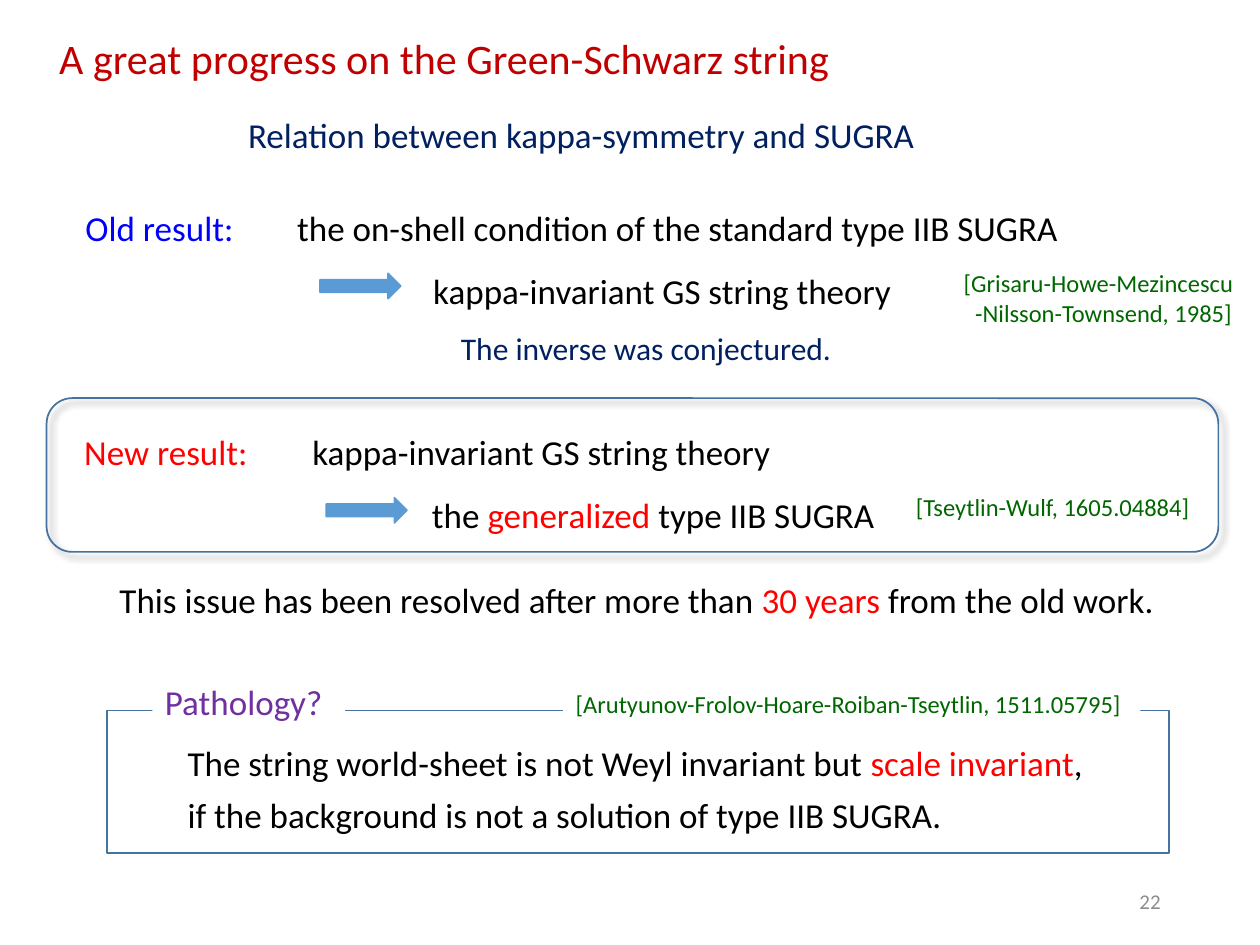
from dataclasses import dataclass

from lxml.etree import SubElement
from pptx import Presentation
from pptx.dml.color import RGBColor
from pptx.enum.shapes import MSO_SHAPE as Shape
from pptx.enum.text import MSO_ANCHOR as Anchor, PP_ALIGN as Align
from pptx.oxml.ns import qn
from pptx.util import Inches, Pt


@dataclass(frozen=True)
class Theme:
    font: str = "Calibri"
    title: str = "C00000"
    ink: str = "000000"
    navy: str = "002060"
    old: str = "0000FF"
    accent: str = "FF0000"
    citation: str = "006600"
    pathology: str = "7030A0"
    page: str = "8C8C8C"
    arrow: str = "5B9BD5"
    frame: str = "43739E"
    paper: str = "FFFFFF"
    title_size: int = 24
    text_size: int = 20
    remark_size: int = 18
    citation_size: int = 14
    page_size: int = 12


@dataclass(frozen=True)
class Box:
    left: float
    top: float
    width: float
    height: float

    def inner(self, dx, dy, width, height):
        return Box(self.left + dx, self.top + dy, width, height)

    def emu(self):
        return [Inches(n) for n in (self.left, self.top, self.width, self.height)]


THEME = Theme()


def write(holder, lines, size, color, spacing=None, wrap=False,
          align=Align.LEFT, anchor=Anchor.TOP):
    frame = holder.text_frame
    frame.word_wrap = wrap
    frame.vertical_anchor = anchor
    for index, line in enumerate(lines):
        paragraph = frame.add_paragraph() if index else frame.paragraphs[0]
        paragraph.alignment = align
        if spacing:
            paragraph.line_spacing = spacing
        paragraph.font.name = THEME.font
        paragraph.font.size = Pt(size)
        paragraph.font.color.rgb = RGBColor.from_string(color)
        for part in [line] if isinstance(line, str) else line:
            words, tint = (part, None) if isinstance(part, str) else part
            run = paragraph.add_run()
            run.text = words
            if tint:
                run.font.color.rgb = RGBColor.from_string(tint)
    return frame.paragraphs


def add_text(slide, box, lines, size=THEME.text_size, color=THEME.ink, **options):
    return write(slide.shapes.add_textbox(*box.emu()), lines, size, color, **options)


def add_shape(slide, kind, box, fill=None, line=None):
    shape = slide.shapes.add_shape(kind, *box.emu())
    shape.shadow.inherit = False
    if fill:
        shape.fill.solid()
        shape.fill.fore_color.rgb = RGBColor.from_string(fill)
    else:
        shape.fill.background()
    if line:
        shape.line.color.rgb = RGBColor.from_string(line)
        shape.line.width = Pt(1)
    else:
        shape.line.fill.background()
    return shape


def indent(paragraph, inches):
    properties = paragraph._p.get_or_add_pPr()
    properties.set("marL", str(Inches(inches)))
    properties.set("indent", "0")


def add_tab_stop(paragraph, inches):
    stops = SubElement(paragraph._p.get_or_add_pPr(), qn("a:tabLst"))
    SubElement(stops, qn("a:tab"), pos=str(Inches(inches)), algn="l")
    default_run = paragraph._p.pPr.find(qn("a:defRPr"))
    if default_run is not None:
        default_run.addprevious(stops)


def cast_shadow(shape):
    effects = shape._element.spPr.find(qn("a:effectLst"))
    shadow = SubElement(effects, qn("a:outerShdw"), blurRad=str(Pt(4)),
                        dist=str(Pt(3)), dir=str(45 * 60000), algn="tl")
    black = SubElement(shadow, qn("a:srgbClr"), val=THEME.ink)
    SubElement(black, qn("a:alpha"), val="40000")


def add_heading(slide, box):
    title = slide.shapes.title
    title.left, title.top, title.width, title.height = box.emu()
    write(title, ["A great progress on the Green-Schwarz string"],
          THEME.title_size, THEME.title)
    add_text(slide, box.inner(1.5, 0.64, 5.55, 0.44),
             ["Relation between kappa-symmetry and SUGRA"], color=THEME.navy)


def add_implication(slide, box, label, color, premise, conclusion, tab, arrow_left):
    first, second = add_text(
        slide, box, [[(f"{label}\t", color), premise], conclusion], wrap=True)
    add_tab_stop(first, tab)
    indent(second, 2.76)
    second.line_spacing = 1.5
    add_shape(slide, Shape.RIGHT_ARROW, box.inner(arrow_left, 0.58, 0.64, 0.2),
              THEME.arrow, THEME.arrow)


def add_old_result(slide, box):
    add_implication(slide, box, "Old result:", THEME.old,
                    "the on-shell condition of the standard type IIB SUGRA",
                    "kappa-invariant GS string theory", 1.68, 1.96)
    authors = add_text(slide, box.inner(6.97, 0.49, 2.67, 0.57),
                       ["[Grisaru-Howe-Mezincescu", "-Nilsson-Townsend, 1985]"],
                       THEME.citation_size, THEME.citation, wrap=True)
    indent(authors[1], 0.09)
    add_text(slide, box.inner(2.98, 0.97, 3.23, 0.4),
             ["The inverse was conjectured."], THEME.remark_size, THEME.navy)


def add_new_result(slide, box):
    cast_shadow(add_shape(slide, Shape.ROUNDED_RECTANGLE, box, line=THEME.frame))
    add_implication(slide, box.inner(0.2, 0.21, 6.52, 0.94),
                    "New result:", THEME.accent,
                    "kappa-invariant GS string theory",
                    ["the ", ("generalized ", THEME.accent), "type IIB SUGRA"],
                    1.81, 2.02)
    add_text(slide, box.inner(6.8, 0.7, 2.41, 0.34), ["[Tseytlin-Wulf, 1605.04884]"],
             THEME.citation_size, THEME.citation, wrap=True)


def add_resolution(slide, box):
    add_text(slide, box, [["This issue has been resolved after more than ",
                           ("30 years ", THEME.accent), "from the old work."]])


def add_pathology(slide, box):
    add_text(slide, box.inner(0.54, 0.11, 7.51, 0.94),
             [["The string world-sheet is not Weyl invariant but ",
               ("scale invariant", THEME.accent), ","],
              "if the background is not a solution of type IIB SUGRA."],
             spacing=1.25)
    add_shape(slide, Shape.RECTANGLE, box, line=THEME.frame)
    captions = [
        (box.inner(0.36, -0.29, 1.53, 0.44), "Pathology?",
         THEME.text_size, THEME.pathology),
        (box.inner(3.62, -0.22, 4.58, 0.34),
         "[Arutyunov-Frolov-Hoare-Roiban-Tseytlin, 1511.05795]",
         THEME.citation_size, THEME.citation),
    ]
    for place, caption, size, color in captions:
        patch = add_shape(slide, Shape.RECTANGLE, place, THEME.paper)
        write(patch, [caption], size, color)


def add_page_number(slide, box):
    add_text(slide, box, ["22"], THEME.page_size, THEME.page,
             align=Align.RIGHT, anchor=Anchor.MIDDLE, wrap=True)


def main():
    deck = Presentation()
    deck.slide_width, deck.slide_height = Inches(10), Inches(7.5)
    slide = deck.slides.add_slide(deck.slide_layouts.get_by_name("Title Only"))
    add_heading(slide, Box(0.37, 0.21, 6.56, 0.5))
    add_old_result(slide, Box(0.58, 1.59, 7.99, 0.94))
    add_new_result(slide, Box(0.37, 3.16, 9.3, 1.22))
    add_resolution(slide, Box(0.85, 4.54, 8.43, 0.44))
    add_pathology(slide, Box(0.85, 5.64, 8.43, 1.13))
    add_page_number(slide, Box(7.06, 6.95, 2.25, 0.4))
    deck.save("out.pptx")


if __name__ == "__main__":
    main()
